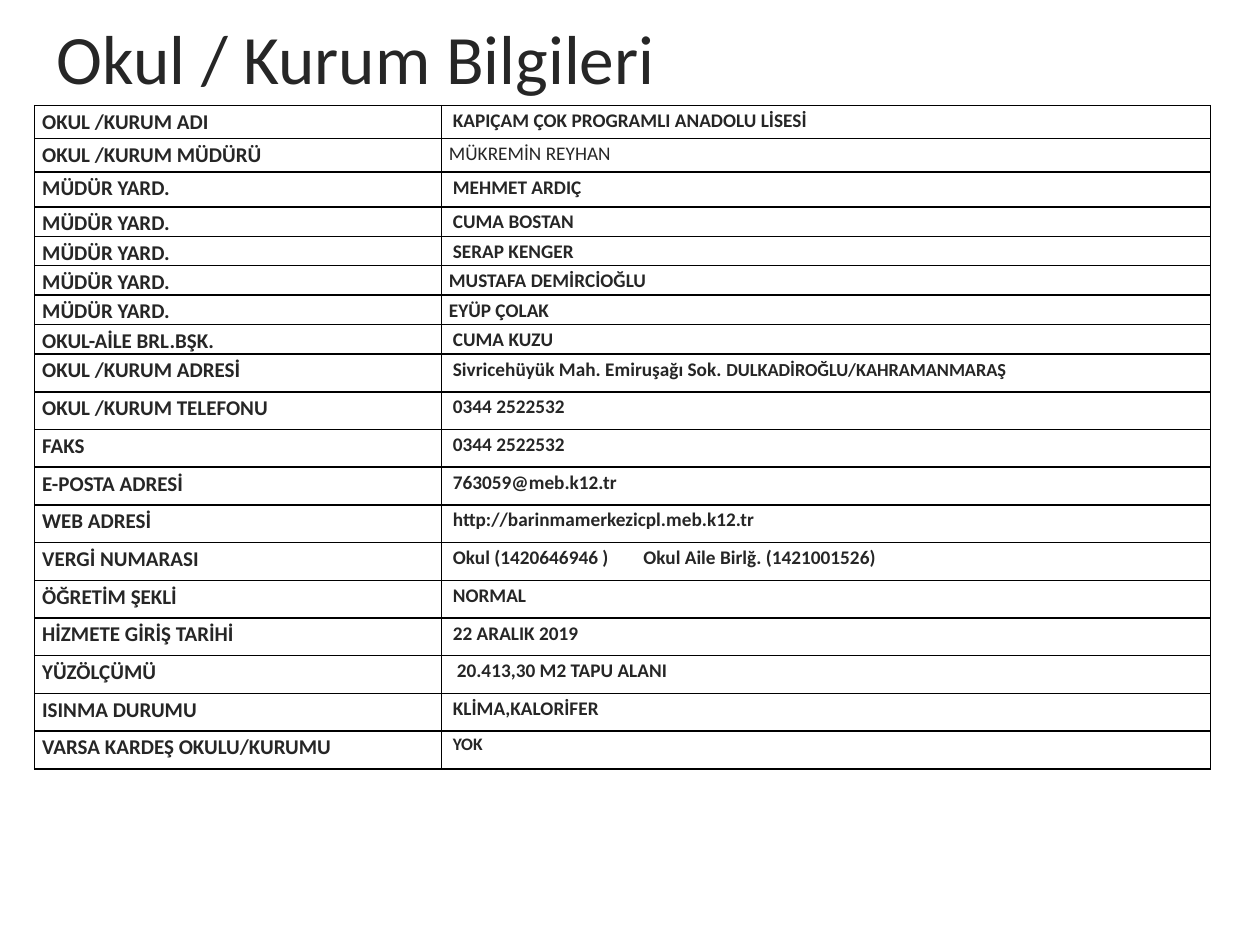
import pptx
import pptx.util
import pptx.dml.color
import pptx.enum.text
import pptx.oxml
import pptx.oxml.ns

Cm, Pt = pptx.util.Cm, pptx.util.Pt

hues = {"text": "262626", "line": "000000"}
font = "Calibri"
head = "Okul / Kurum Bilgileri"
# label, indent steps, runs as (text, size, bold), row height
short, tall = 0.59, 0.76
rows = [
    ("OKUL /KURUM ADI", 1, [("KAPIÇAM ÇOK PROGRAMLI ANADOLU LİSESİ", 11, True)], 0.66),
    ("OKUL /KURUM MÜDÜRÜ", 0, [("MÜKREMİN REYHAN", 11, False)], 0.68),
    ("MÜDÜR YARD.", 1, [("MEHMET ARDIÇ", 11, True)], 0.7),
    ("MÜDÜR YARD.", 1, [("CUMA BOSTAN", 11, True)], short),
    ("MÜDÜR YARD.", 1, [("SERAP KENGER", 11, True)], short),
    ("MÜDÜR YARD.", 0, [("MUSTAFA DEMİRCİOĞLU", 11, True)], short),
    ("MÜDÜR YARD.", 0, [("EYÜP ÇOLAK", 11, True)], short),
    ("OKUL-AİLE BRL.BŞK.", 1, [("CUMA KUZU", 11, True)], short),
    ("OKUL /KURUM ADRESİ", 1, [("Sivricehüyük Mah. Emiruşağı Sok. ", 11, True),
                               ("DULKADİROĞLU/KAHRAMANMARAŞ", 10.5, True)], tall),
    ("OKUL /KURUM TELEFONU", 1, [("0344 2522532", 11, True)], tall),
    ("FAKS", 1, [("0344 2522532", 11, True)], tall),
    ("E-POSTA ADRESİ", 1, [("763059@meb.k12.tr", 11, True)], tall),
    ("WEB ADRESİ", 1, [("http://barinmamerkezicpl.meb.k12.tr", 11, True)], tall),
    ("VERGİ NUMARASI", 1, [("Okul (1420646946 )\tOkul Aile Birlğ. (1421001526)", 11, True)], tall),
    ("ÖĞRETİM ŞEKLİ", 1, [("NORMAL", 11, True)], tall),
    ("HİZMETE GİRİŞ TARİHİ", 1, [("22 ARALIK 2019", 11, True)], tall),
    ("YÜZÖLÇÜMÜ", 2, [("20.413,30 M2 TAPU ALANI", 11, True)], tall),
    ("ISINMA DURUMU", 1, [("KLİMA,KALORİFER", 11, True)], tall),
    ("VARSA KARDEŞ OKULU/KURUMU", 1, [("YOK", 10, True)], tall),
]
wides = (8.2, 15.5)
pad, step, stop = 0.15, 0.08, 3.84


def add_run(para, text, size, bold):
    run = para.add_run()
    run.text = text
    run.font.name = font
    run.font.size = Pt(size)
    run.font.bold = bold
    run.font.color.rgb = pptx.dml.color.RGBColor.from_string(hues["text"])


def add_lines(cell):
    props = cell._tc.get_or_add_tcPr()
    for spot, side in enumerate(("lnL", "lnR", "lnT", "lnB")):
        props.insert(spot, pptx.oxml.parse_xml(
            f'<a:{side} {pptx.oxml.ns.nsdecls("a")} w="{Pt(1)}"><a:solidFill>'
            f'<a:srgbClr val="{hues["line"]}"/></a:solidFill></a:{side}>'))


def add_stop(para):
    para._p.get_or_add_pPr().append(pptx.oxml.parse_xml(
        f'<a:tabLst {pptx.oxml.ns.nsdecls("a")}>'
        f'<a:tab pos="{Cm(stop)}" algn="l"/></a:tabLst>'))


def fill_cell(cell, runs, steps):
    cell.margin_left = Cm(pad + steps * step)
    cell.margin_right = Cm(pad)
    cell.margin_top = cell.margin_bottom = 0
    cell.fill.background()
    add_lines(cell)
    para = cell.text_frame.paragraphs[0]
    para.line_spacing = 1.15
    if any("\t" in run[0] for run in runs):
        add_stop(para)
    for run in runs:
        add_run(para, *run)


def main():
    deck = pptx.Presentation()
    deck.slide_width, deck.slide_height = Cm(25.4), Cm(19.05)
    slide = deck.slides.add_slide(deck.slide_layouts[5])

    title = slide.shapes.title
    title.left, title.top = Cm(0.89), Cm(0.2)
    title.width, title.height = Cm(23.65), Cm(1.9)
    title.text_frame.vertical_anchor = pptx.enum.text.MSO_ANCHOR.MIDDLE
    para = title.text_frame.paragraphs[0]
    para.alignment = pptx.enum.text.PP_ALIGN.LEFT
    add_run(para, head, 39.6, False)

    frame = slide.shapes.add_table(
        len(rows), len(wides), Cm(0.7), Cm(2.13),
        Cm(sum(wides)), Cm(sum(row[3] for row in rows)))
    table = frame.table
    table.first_row = table.horz_banding = False
    for col, wide in zip(table.columns, wides):
        col.width = Cm(wide)
    for line, (label, steps, runs, high) in zip(table.rows, rows):
        line.height = Cm(high)
        fill_cell(line.cells[0], [(label, 12, True)], 0)
        fill_cell(line.cells[1], runs, steps)

    deck.save("out.pptx")


if __name__ == "__main__":
    main()
